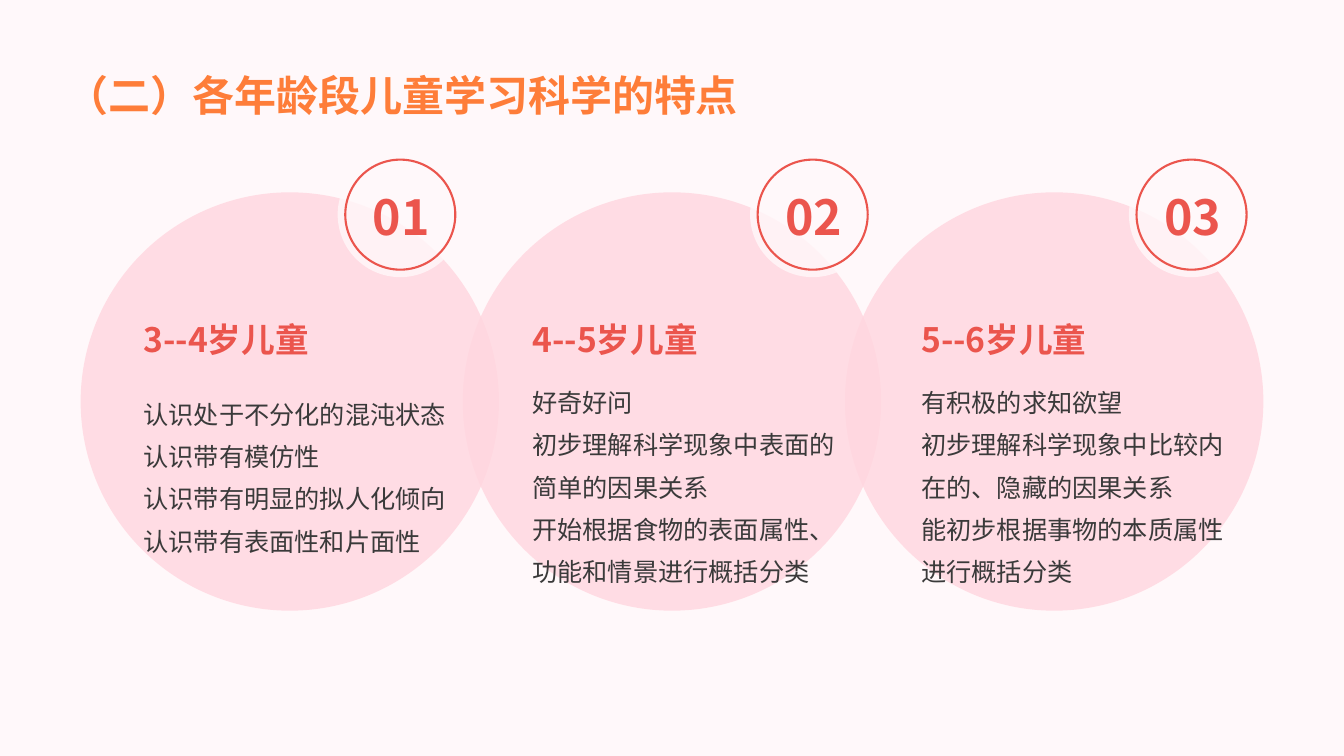
from dataclasses import dataclass
from lxml import etree
from pptx import Presentation, util as u
from pptx.dml.color import RGBColor
from pptx.enum import shapes, text
from pptx.oxml.ns import qn

COLS, ROWS = 160, 90
CELL = u.Inches(1 / 12)


@dataclass(frozen=True)
class Theme:
    font: str = "Noto Sans CJK SC"
    back: str = "FFF8FA"
    disc: str = "FFD6DF"
    red: str = "EB554D"
    ink: str = "3A3A3A"
    gold: str = "FE7D39"
    title: float = 30
    head: float = 24
    body: float = 18
    num: float = 34.5
    alpha: int = 80


THEME = Theme()

AGES = [
    ("01", "3--4岁儿童", 40.2, 15.4, 44.4,
     ["认识处于不分化的混沌状态", "认识带有模仿性",
      "认识带有明显的拟人化倾向", "认识带有表面性和片面性"]),
    ("02", "4--5岁儿童", 89.3, 61.7, 43,
     ["好奇好问", "初步理解科学现象中表面的简单的因果关系",
      "开始根据食物的表面属性、功能和情景进行概括分类"]),
    ("03", "5--6岁儿童", 134.4, 108, 43,
     ["有积极的求知欲望", "初步理解科学现象中比较内在的、隐藏的因果关系",
      "能初步根据事物的本质属性进行概括分类"]),
]


def cells(*sides):
    return [round(side * CELL) for side in sides]


def tint(code):
    return RGBColor.from_string(code)


def oval(slide, left, top, size, fill=None, line=None):
    ring = slide.shapes.add_shape(
        shapes.MSO_SHAPE.OVAL, *cells(left, top, size, size))
    ring.shadow.inherit = False
    if fill:
        ring.fill.solid()
        ring.fill.fore_color.rgb = tint(fill)
        clr = ring.fill._xPr.find(".//" + qn("a:srgbClr"))
        etree.SubElement(clr, qn("a:alpha"), val=str(THEME.alpha * 1000))
    else:
        ring.fill.background()
    if line:
        ring.line.color.rgb = tint(line)
        ring.line.width = u.Pt(1.5)
    else:
        ring.line.fill.background()


def label(slide, box, lines, size, color, bold=True, gap=None,
          anchor=text.MSO_ANCHOR.MIDDLE, align=text.PP_ALIGN.LEFT):
    frame = slide.shapes.add_textbox(*cells(*box)).text_frame
    frame.word_wrap = True
    frame.vertical_anchor = anchor
    frame.margin_left = frame.margin_top = frame.margin_bottom = u.Inches(0.14)
    frame.margin_right = u.Inches(0.06)
    frame.text = "\n".join(lines)
    for para in frame.paragraphs:
        para.alignment = align
        para.line_spacing = gap
        for run in para.runs:
            run.font.size = u.Pt(size)
            run.font.bold = bold
            run.font.color.rgb = tint(color)
            run.font.name = THEME.font
            etree.SubElement(run.font._element, qn("a:ea"), typeface=THEME.font)


def badge(slide, left, num):
    top = 18.1
    oval(slide, left, top, 14.9, fill=THEME.back)
    oval(slide, left + 0.9, top + 0.9, 13.1, line=THEME.red)
    label(slide, (left - 0.5, top + 2.3, 15.2, 10.6), [num], THEME.num,
          THEME.red, align=text.PP_ALIGN.CENTER)


def notes(slide, left, top, head, lines):
    label(slide, (left, 35.6, 36.7, 8.9), [head], THEME.head, THEME.red,
          gap=1.2, anchor=text.MSO_ANCHOR.BOTTOM)
    label(slide, (left, top, 38.4, 16.3), lines, THEME.body, THEME.ink,
          bold=False, gap=1.4, anchor=text.MSO_ANCHOR.TOP)


def main():
    deck = Presentation()
    deck.slide_width, deck.slide_height = cells(COLS, ROWS)
    slide = deck.slides.add_slide(deck.slide_layouts[6])
    slide.background.fill.solid()
    slide.background.fill.fore_color.rgb = tint(THEME.back)
    for i in range(len(AGES)):
        oval(slide, 9.6 + 45.5 * i, 22.9, 49.8, fill=THEME.disc)
    for num, head, spot, left, top, lines in AGES:
        notes(slide, left, top, head, lines)
        badge(slide, spot, num)
    label(slide, (6.2, 3.5, 147.5, 12), ["（二）各年龄段儿童学习科学的特点"],
          THEME.title, THEME.gold, gap=1.6)
    deck.save("out.pptx")


if __name__ == "__main__":
    main()
